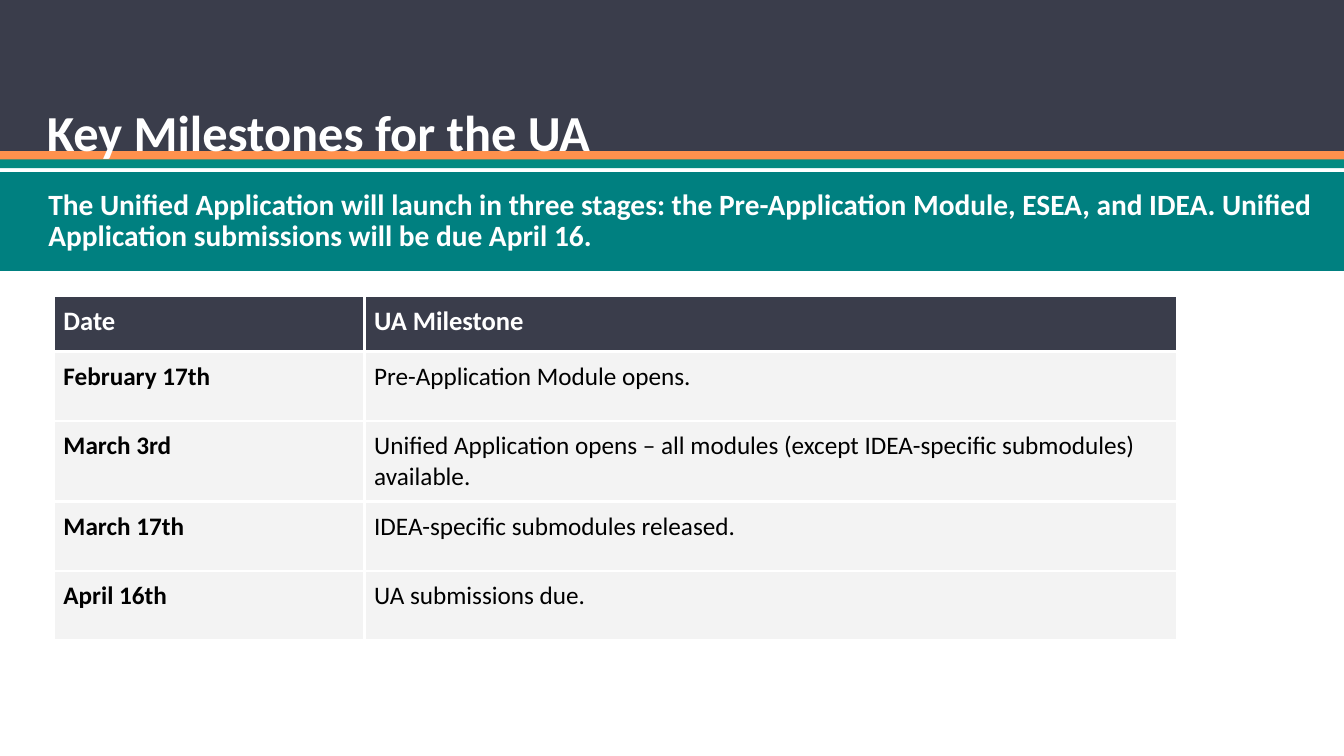
from dataclasses import dataclass

from lxml import etree
from pptx import Presentation
from pptx.dml.color import RGBColor
from pptx.enum.shapes import MSO_SHAPE
from pptx.enum.text import MSO_ANCHOR, PP_ALIGN
from pptx.oxml.ns import qn
from pptx.util import Cm, Pt

RECTANGLE = MSO_SHAPE.RECTANGLE
TOP, MIDDLE = MSO_ANCHOR.TOP, MSO_ANCHOR.MIDDLE
LEFT = PP_ALIGN.LEFT


@dataclass(frozen=True)
class Theme:
    font: str = "Calibri"
    navy: str = "3A3D4B"
    orange: str = "FF914D"
    green: str = "048A81"
    teal: str = "008080"
    grey: str = "F3F3F3"
    white: str = "FFFFFF"
    black: str = "000000"
    title_size: float = 36
    summary_size: float = 21
    header_size: float = 19
    body_size: float = 18


theme = Theme()
PAGE_WIDTH = 33.87


def add_band(page, top, height, color):
    band = page.shapes.add_shape(RECTANGLE, 0, Cm(top), Cm(PAGE_WIDTH), Cm(height))
    band.shadow.inherit = False
    band.fill.solid()
    band.fill.fore_color.rgb = RGBColor.from_string(color)
    band.line.fill.background()
    return band


def write_text(frame, text, size, color, bold, inset=0.25):
    frame.word_wrap = True
    frame.margin_left = frame.margin_right = Cm(inset)
    frame.margin_top = frame.margin_bottom = Cm(inset)
    para = frame.paragraphs[0]
    para.text = text
    para.alignment = LEFT
    para.font.name = theme.font
    para.font.size = Pt(size)
    para.font.bold = bold
    para.font.color.rgb = RGBColor.from_string(color)
    return para


deck = Presentation()
deck.slide_width, deck.slide_height = Cm(PAGE_WIDTH), Cm(19.05)
page = deck.slides.add_slide(deck.slide_layouts[6])

# Header bands
add_band(page, 0, 3.81, theme.navy)
add_band(page, 3.81, 0.22, theme.orange)
add_band(page, 4.02, 0.22, theme.green)

# Title
title = page.shapes.add_textbox(Cm(0.85), Cm(1.6), Cm(31.55), Cm(2.1))
title.text_frame.vertical_anchor = TOP
para = write_text(title.text_frame, "Key Milestones for the UA",
                  theme.title_size, theme.white, True, inset=0.33)
para.line_spacing = 1.4

# Milestone table
milestones = [
    ("Date", "UA Milestone"),
    ("February 17th", "Pre-Application Module opens."),
    ("March 3rd", "Unified Application opens – all modules "
                  "(except IDEA-specific submodules) available."),
    ("March 17th", "IDEA-specific submodules released."),
    ("April 16th", "UA submissions due."),
]
column_widths = [7.83, 20.5]
row_heights = [1.42, 1.75, 2.03, 1.75, 1.75]
table = page.shapes.add_table(
    len(milestones), len(column_widths), Cm(1.35), Cm(7.44),
    Cm(sum(column_widths)), Cm(sum(row_heights))).table
for column, width in zip(table.columns, column_widths):
    column.width = Cm(width)
for row, height in zip(table.rows, row_heights):
    row.height = Cm(height)

for row_index, milestone in enumerate(milestones):
    is_header = row_index == 0
    for column_index, text in enumerate(milestone):
        cell = table.cell(row_index, column_index)
        para = write_text(cell.text_frame, text,
                          theme.header_size if is_header else theme.body_size,
                          theme.white if is_header else theme.black,
                          is_header or column_index == 0)
        if not is_header:
            para.space_after = Pt(10)
        cell.margin_left = cell.margin_right = Cm(0.25)
        cell.margin_top = cell.margin_bottom = Cm(0.25)
        # White borders come before the fill in the cell properties
        properties = cell._tc.get_or_add_tcPr()
        for side in ("a:lnL", "a:lnR", "a:lnT", "a:lnB"):
            border = etree.SubElement(properties, qn(side), w=str(Pt(2.25)))
            fill = etree.SubElement(border, qn("a:solidFill"))
            etree.SubElement(fill, qn("a:srgbClr"), val=theme.white)
        cell.fill.solid()
        cell.fill.fore_color.rgb = RGBColor.from_string(
            theme.navy if is_header else theme.grey)

# Summary band
summary = add_band(page, 4.34, 2.49, theme.teal)
summary.text_frame.vertical_anchor = MIDDLE
para = write_text(
    summary.text_frame,
    "The Unified Application will launch in three stages: the Pre-Application Module, "
    "ESEA, and IDEA. Unified Application submissions will be due April 16.",
    theme.summary_size, theme.white, True)
para.line_spacing = 0.9
summary.text_frame.margin_left = Cm(1.22)

deck.save("out.pptx")
